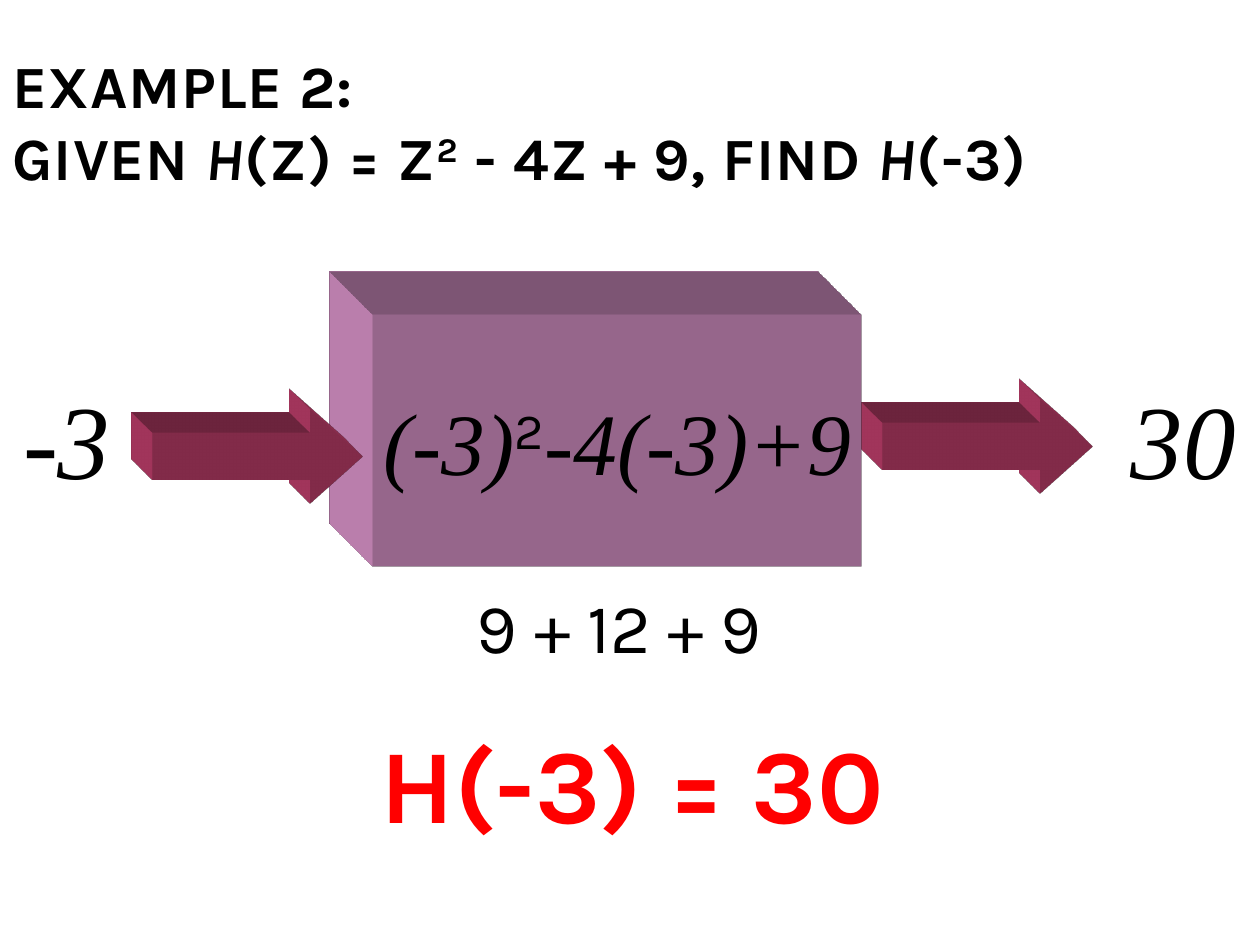
import lxml.etree
import pptx
import pptx.dml.color
import pptx.enum.shapes
import pptx.enum.text
import pptx.oxml
import pptx.oxml.ns
import pptx.util
from pptx.util import Inches

SHAPE = pptx.enum.shapes.MSO_SHAPE
ANCHOR = pptx.enum.text.MSO_ANCHOR
ALIGN = pptx.enum.text.PP_ALIGN
FIT = pptx.enum.text.MSO_AUTO_SIZE
NS = pptx.oxml.ns.nsdecls("a")

COLORS = {"ink": "000000", "answer": "FF0000", "arrow": "B83D68",
          "machine": "D490C5", "outline": "5E1A50"}
HEADING = {"name": "Karla", "size": pptx.util.Pt(34.2), "bold": True}
MATH = {"name": "Times New Roman", "size": pptx.util.Pt(60), "italic": True}
RULE = {**MATH, "size": pptx.util.Pt(50)}
STEP = {"name": "Karla", "size": pptx.util.Pt(40)}
ANSWER = {**STEP, "size": pptx.util.Pt(60), "bold": True}


def color(key):
    return pptx.dml.color.RGBColor.from_string(COLORS[key])


def add_run(paragraph, text, style, ink="ink", raised=False):
    run = paragraph.add_run()
    run.text = text
    for attribute, value in style.items():
        setattr(run.font, attribute, value)
    run.font.color.rgb = color(ink)
    if raised:
        run._r.get_or_add_rPr().set("baseline", "30000")
    return run


def extrude(shape, depth):
    """Give a shape an oblique solid depth towards the top left."""
    fill = shape.fill.fore_color.rgb
    properties = shape.element.spPr
    properties.append(pptx.oxml.parse_xml(
        f'<a:scene3d {NS}><a:camera prst="legacyObliqueTopLeft"/>'
        '<a:lightRig rig="legacyFlat3" dir="t"/></a:scene3d>'))
    properties.append(pptx.oxml.parse_xml(
        f'<a:sp3d {NS} extrusionH="{int(depth)}" prstMaterial="legacyMatte">'
        f'<a:extrusionClr><a:srgbClr val="{fill}"/></a:extrusionClr></a:sp3d>'))


def add_solid(slide, kind, box, fill, depth):
    solid = slide.shapes.add_shape(kind, *map(Inches, box))
    solid.shadow.inherit = False
    solid.fill.solid()
    solid.fill.fore_color.rgb = color(fill)
    solid.line.fill.background()
    extrude(solid, depth)
    return solid


def add_title(slide, box):
    title = slide.shapes.title
    title.left, title.top, title.width, title.height = map(Inches, box)
    frame = title.text_frame
    frame.auto_size = FIT.NONE
    frame.vertical_anchor = ANCHOR.BOTTOM
    paragraph = frame.paragraphs[0]
    paragraph.alignment = ALIGN.LEFT
    slanted = {**HEADING, "italic": True}
    add_run(paragraph, "EXAMPLE 2:", HEADING)
    paragraph.add_line_break()
    paragraph._p.findall(pptx.oxml.ns.qn("a:br"))[0].append(
        pptx.oxml.parse_xml(f'<a:rPr {NS} sz="3420"/>'))
    for text, style, raised in (
            ("GIVEN ", HEADING, False), ("H", slanted, False),
            ("(Z) = Z", HEADING, False), ("2", HEADING, True),
            (" - 4Z + 9, FIND ", HEADING, False), ("H", slanted, False),
            ("(-3)", HEADING, False)):
        add_run(paragraph, text, style, raised=raised)
    # Hairline outline and slight tracking on the letters
    for run in paragraph.runs:
        letters = run._r.get_or_add_rPr()
        letters.set("spc", "50")
        letters.insert(0, pptx.oxml.parse_xml(
            f'<a:ln {NS} w="500"><a:solidFill><a:srgbClr '
            f'val="{COLORS["outline"]}"/></a:solidFill></a:ln>'))


def add_arrow(slide, box):
    arrow = add_solid(slide, SHAPE.RIGHT_ARROW, box, "arrow", Inches(0.47))
    arrow.adjustments[0], arrow.adjustments[1] = 0.5, 0.56


def add_machine(slide, box):
    machine = add_solid(slide, SHAPE.RECTANGLE, box, "machine", Inches(0.97))
    frame = machine.text_frame
    frame.word_wrap = False
    frame.vertical_anchor = ANCHOR.MIDDLE
    paragraph = frame.paragraphs[0]
    paragraph.alignment = ALIGN.CENTER
    add_run(paragraph, "(-3)", RULE)
    add_run(paragraph, "2", {**RULE, "name": "Karla", "italic": False}, raised=True)
    add_run(paragraph, "-4(-3)+9", RULE)


def add_label(slide, box, text, style, ink="ink", wrap=True):
    frame = slide.shapes.add_textbox(*map(Inches, box)).text_frame
    frame.word_wrap = wrap
    frame.auto_size = FIT.SHAPE_TO_FIT_TEXT
    paragraph = frame.paragraphs[0]
    paragraph.alignment = ALIGN.CENTER
    add_run(paragraph, text, style, ink)


def main():
    deck = pptx.Presentation()
    deck.slide_width, deck.slide_height = Inches(10), Inches(7.5)
    slide = deck.slides.add_slide(deck.slide_layouts[5])

    add_title(slide, (0, 0.25, 9.08, 1.33))

    # Function machine: input, rule, output
    add_arrow(slide, (7, 3.17, 1.67, 0.75))
    add_machine(slide, (2.96, 2.5, 3.88, 2))
    add_label(slide, (0.08, 2.92, 0.9, 1.1), "-3", MATH, wrap=False)
    add_label(slide, (8.77, 2.92, 1.24, 1.1), "30", MATH)
    add_arrow(slide, (1.21, 3.25, 1.67, 0.75))

    # Working and answer
    add_label(slide, (3, 4.58, 3.83, 0.77), "9 + 12 + 9", STEP)
    add_label(slide, (2.62, 5.65, 4.79, 1.11), "H(-3) = 30", ANSWER, "answer")

    deck.save("out.pptx")


if __name__ == "__main__":
    main()
